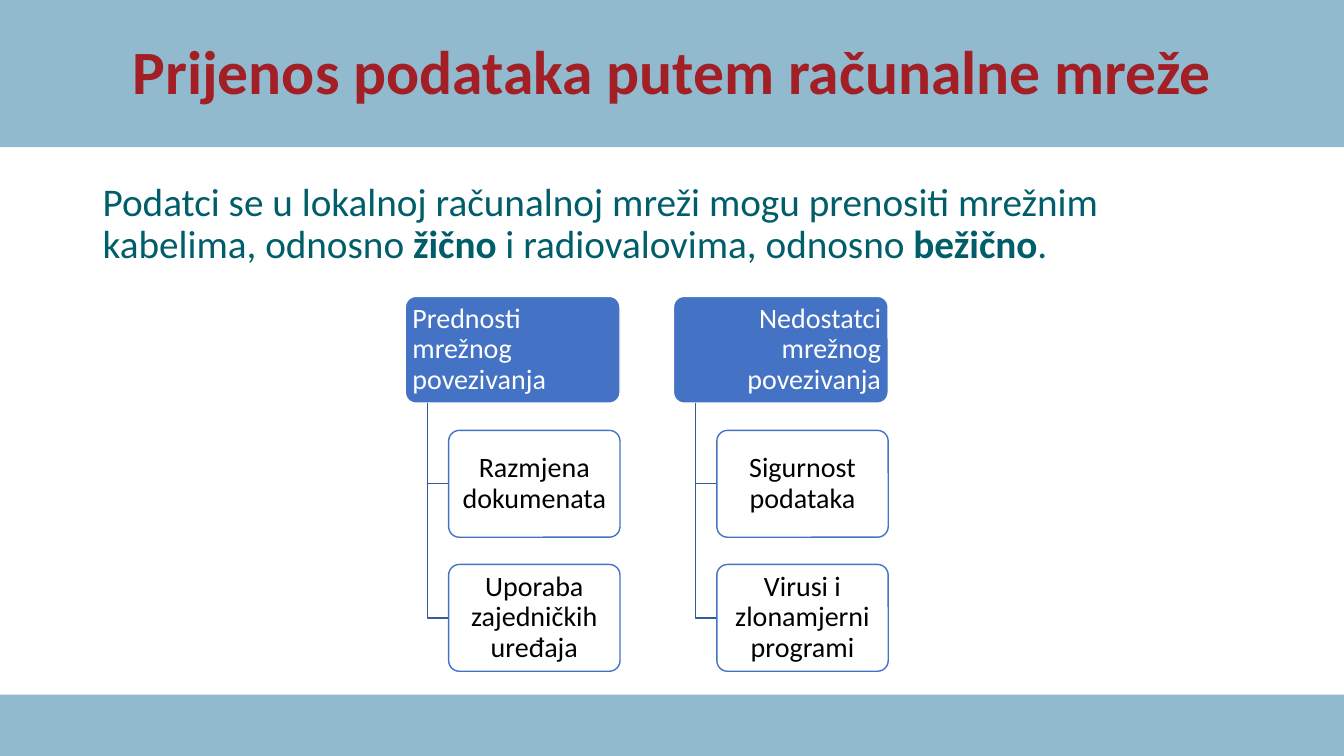
from pptx import Presentation
from pptx.dml.color import RGBColor
from pptx.enum.shapes import MSO_SHAPE
from pptx.enum.text import MSO_ANCHOR, PP_ALIGN
from pptx.util import Inches, Pt

RECTANGLE, ROUNDED = MSO_SHAPE.RECTANGLE, MSO_SHAPE.ROUNDED_RECTANGLE
LEFT, CENTER, RIGHT = PP_ALIGN.LEFT, PP_ALIGN.CENTER, PP_ALIGN.RIGHT
TOP, MIDDLE = MSO_ANCHOR.TOP, MSO_ANCHOR.MIDDLE

COLORS = {
    "band": "91BACF", "title": "A31F26", "body": "005E6A", "blue": "4472C4",
    "branch": "365B9D", "white": "FFFFFF", "black": "000000",
}
FONT = "Calibri"
WIDTH, HEIGHT = 13.33, 7.5

# Hierarchy: columns of a heading with its items below
COLUMNS = [
    ("Prednosti mrežnog povezivanja", LEFT,
     ["Razmjena dokumenata", "Uporaba zajedničkih uređaja"]),
    ("Nedostatci mrežnog povezivanja", RIGHT,
     ["Sigurnost podataka", "Virusi i zlonamjerni programi"]),
]
TREE_LEFT, TREE_TOP = 4.02, 2.94
COLUMN_STEP, ROW_STEP = 2.66, 1.33
HEADING_WIDTH, ITEM_WIDTH, BOX_HEIGHT = 2.13, 1.7, 1.06
TRUNK_INDENT, ITEM_INDENT = 0.22, 0.43


def rgb(name):
    return RGBColor.from_string(COLORS[name])


class SlideBuilder:
    def __init__(self, page):
        self.page = page

    def set_text(self, shape, spans, size, color, align, anchor):
        """Fill a shape with one paragraph of (text, bold) spans."""
        frame = shape.text_frame
        frame.word_wrap = True
        frame.vertical_anchor = anchor
        para = frame.paragraphs[0]
        para.alignment = align
        para.line_spacing = 0.9
        para.space_before = Pt(0)
        para.font.name = FONT
        para.font.size = Pt(size)
        para.font.color.rgb = rgb(color)
        for text, bold in spans:
            span = para.add_run()
            span.text = text
            span.font.bold = bold

    def title(self, text, left, top, width, height):
        title = self.page.shapes.title
        title.left, title.top = Inches(left), Inches(top)
        title.width, title.height = Inches(width), Inches(height)
        self.set_text(title, [(text, True)], 44, "title", CENTER, MIDDLE)

    def text(self, spans, left, top, width, height):
        box = self.page.shapes.add_textbox(
            Inches(left), Inches(top), Inches(width), Inches(height))
        self.set_text(box, spans, 28, "body", LEFT, TOP)

    def shape(self, kind, left, top, width, height, fill, line=None):
        shape = self.page.shapes.add_shape(
            kind, Inches(left), Inches(top), Inches(width), Inches(height))
        shape.shadow.inherit = False
        shape.fill.solid()
        shape.fill.fore_color.rgb = rgb(fill)
        if line:
            shape.line.color.rgb = rgb(line)
            shape.line.width = Pt(1)
        else:
            shape.line.fill.background()
        return shape

    def band(self, top, height):
        band = self.shape(RECTANGLE, 0, top, WIDTH, height, "band")
        # Place the band behind the title
        self.page.shapes.title.element.addprevious(band.element)

    def node(self, text, left, top, width, fill, line, color, align):
        node = self.shape(ROUNDED, left, top, width, BOX_HEIGHT, fill, line)
        node.adjustments[0] = 0.1
        frame = node.text_frame
        frame.margin_left = frame.margin_right = Inches(0.04)
        frame.margin_top = frame.margin_bottom = Inches(0.03)
        self.set_text(node, [(text, False)], 20, color, align, MIDDLE)

    def branch(self, left, top, right, bottom):
        outline = self.page.shapes.build_freeform(Inches(left), Inches(top))
        outline.add_line_segments(
            [(Inches(left), Inches(bottom)), (Inches(right), Inches(bottom))],
            close=False)
        branch = outline.convert_to_shape()
        branch.shadow.inherit = False
        branch.fill.background()
        branch.line.color.rgb = rgb("branch")
        branch.line.width = Pt(1)

    def column(self, left, heading, align, items):
        self.node(heading, left, TREE_TOP, HEADING_WIDTH,
                  "blue", "white", "white", align)
        for row, item in enumerate(items, start=1):
            top = TREE_TOP + row * ROW_STEP
            self.branch(left + TRUNK_INDENT, TREE_TOP + BOX_HEIGHT,
                        left + ITEM_INDENT, top + BOX_HEIGHT / 2)
            self.node(item, left + ITEM_INDENT, top, ITEM_WIDTH,
                      "white", "blue", "black", CENTER)


def main():
    deck = Presentation()
    deck.slide_width, deck.slide_height = Inches(WIDTH), Inches(HEIGHT)
    page = deck.slides.add_slide(deck.slide_layouts.get_by_name("Title Only"))
    builder = SlideBuilder(page)

    # Bands and title
    builder.band(6.89, HEIGHT - 6.89)
    builder.band(0, 1.46)
    builder.title("Prijenos podataka putem računalne mreže",
                  0.92, 0.21, 11.5, 1.06)

    # Introduction
    builder.text([
        ("Podatci se u lokalnoj računalnoj mreži mogu prenositi mrežnim "
         "kabelima, odnosno ", False),
        ("žično", True),
        (" i radiovalovima, odnosno ", False),
        ("bežično", True),
        (".", False),
    ], 0.92, 1.76, 11.5, 1.02)

    # Advantages and disadvantages
    for index, (heading, align, items) in enumerate(COLUMNS):
        builder.column(TREE_LEFT + index * COLUMN_STEP, heading, align, items)

    deck.save("out.pptx")


if __name__ == "__main__":
    main()
